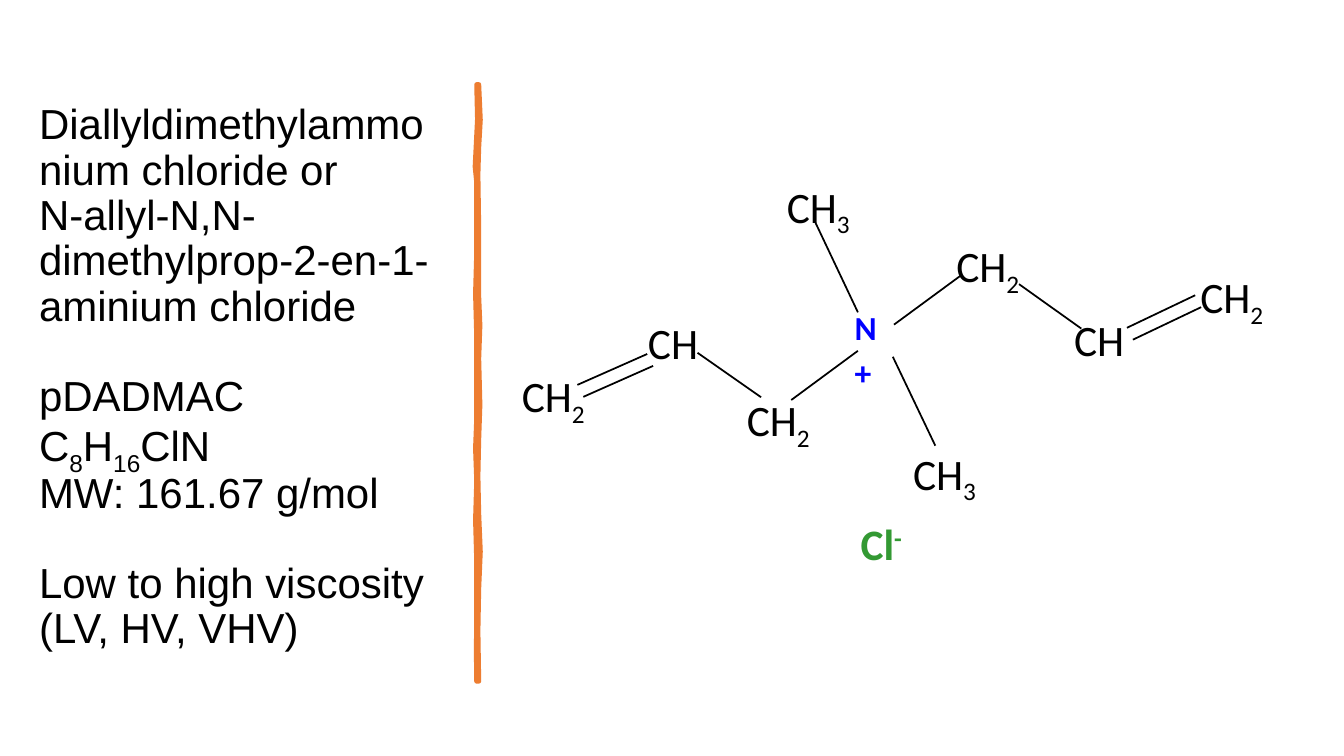
from dataclasses import dataclass

import pptx
import pptx.dml.color
import pptx.enum.shapes
import pptx.enum.text
import pptx.oxml
import pptx.oxml.ns
import pptx.util
from pptx.util import Cm, Pt

BLACK, BLUE, GREEN, ORANGE = "000000", "0000FF", "339933", "ED7D31"
SUB, SUPER = -25, 30
SHIFT = (0.15, 0.3)  # second stroke of a double bond, cm


@dataclass
class Atom:
    left: float
    top: float
    lines: list
    width: float = 2.2
    height: float = 1.45
    size: int = 31
    color: str = BLACK
    bold: bool = False


@dataclass
class Bond:
    start: tuple
    end: tuple
    double: bool = False


CH = [("CH", 0)]
CH2 = CH + [("2", SUB)]
CH3 = CH + [("3", SUB)]

ATOMS = [
    Atom(19.58, 4.42, [CH3]),
    Atom(21.29, 7.72, [[("N", 0)], [("+", 0)]], 1.32, 2.54, 24, BLUE, True),
    Atom(22.76, 11.15, [CH3]),
    Atom(18.57, 9.8, [CH2]),
    Atom(16.08, 7.98, [CH], 1.78),
    Atom(12.9, 9.19, [CH2]),
    Atom(23.85, 5.92, [CH2]),
    Atom(26.82, 7.92, [CH], 1.78),
    Atom(30, 6.71, [CH2]),
    Atom(21.44, 13.06, [[("Cl", 0), ("-", SUPER)]], 1.6, color=GREEN, bold=True),
]

BONDS = [
    Bond((23.57, 11.23), (22.5, 8.99)),
    Bond((21.62, 8.84), (19.94, 10.08)),
    Bond((19.18, 10.01), (17.58, 8.89)),
    Bond((16.31, 8.92), (14.55, 9.7), True),
    Bond((21.62, 7.87), (20.55, 5.61)),
    Bond((24.23, 6.93), (22.53, 8.18)),
    Bond((27.25, 8.28), (25.68, 7.16)),
    Bond((30.12, 7.44), (28.4, 8.26), True),
]

FACTS = [
    [("Diallyldimethylammonium chloride or\n"
      "N-allyl-N,N-dimethylprop-2-en-1-aminium chloride", 0)],
    [("pDADMAC\nC", 0), ("8", SUB), ("H", 0), ("16", SUB),
     ("ClN\nMW: 161.67 g/mol", 0)],
    [("Low to high viscosity\n(LV, HV, VHV)", 0)],
]

# Hand-drawn rule: down the right edge, up the left edge
EDGE = [
    (12.07, 2.13), (12.11, 3.02), (12.07, 3.71), (12.05, 4.4), (12.07, 5.74),
    (12.07, 7.47), (12.1, 8.2), (12.07, 9.04), (12.1, 10.2), (12.07, 11.07),
    (12.05, 12), (12.07, 12.95), (12.11, 13.9), (12.07, 14.83), (12.05, 15.9),
    (12.07, 17.17), (12.01, 17.17), (12, 16.4), (12.01, 15.57), (12.01, 14.15),
    (11.98, 13.1), (12.01, 12.12), (11.98, 11.3), (12.01, 10.54), (12.01, 8.51),
    (11.98, 7.4), (12.01, 6.35), (12.01, 4.6), (11.97, 4.2), (12.03, 3),
    (12.01, 2.13),
]


def paint(target, color: str) -> None:
    """Set a colour format from a hex string."""
    target.rgb = pptx.dml.color.RGBColor.from_string(color)


def append(parent, tag: str) -> None:
    """Add an empty drawing element at the end of parent."""
    parent.append(pptx.oxml.parse_xml(f"<a:{tag} {pptx.oxml.ns.nsdecls('a')}/>"))


def write(frame, lines: list, font: str, size: int, color: str,
          bold: bool = False, before: int = 0, after: int = 0) -> None:
    """Fill a text frame; each line is a list of (text, baseline) pieces."""
    for i, line in enumerate(lines):
        para = frame.add_paragraph() if i else frame.paragraphs[0]
        para.alignment = pptx.enum.text.PP_ALIGN.LEFT
        para.line_spacing = 0.9
        para.space_before = Pt(before if i else 0)
        para.space_after = Pt(after)
        para.font.name = font
        para.font.size = Pt(size)
        para.font.bold = bold
        paint(para.font.color, color)
        for text, base in line:
            for j, part in enumerate(text.split("\n")):
                if j:
                    para.add_line_break()
                run = para.add_run()
                run.text = part
                if base:
                    run._r.get_or_add_rPr().set("baseline", str(base * 1000))


def draw_title(slide) -> None:
    title = slide.shapes.title
    title.left, title.top = Cm(0.73), Cm(1.77)
    title.width, title.height = Cm(10.54), Cm(15.52)
    frame = title.text_frame
    frame.word_wrap = True
    frame.auto_size = pptx.enum.text.MSO_AUTO_SIZE.NONE
    frame.vertical_anchor = pptx.enum.text.MSO_ANCHOR.MIDDLE
    write(frame, FACTS, "Arial", 30, BLACK, before=32)


def draw_rule(slide) -> None:
    points = [(Cm(x), Cm(y)) for x, y in EDGE]
    maker = slide.shapes.build_freeform(*points[0])
    maker.add_line_segments(points[1:], close=True)
    rule = maker.convert_to_shape()
    rule.shadow.inherit = False
    rule.fill.solid()
    paint(rule.fill.fore_color, ORANGE)
    paint(rule.line.color, ORANGE)
    rule.line.width = Pt(3.25)
    append(rule._element.spPr.find(pptx.oxml.ns.qn("a:ln")), "round")


def draw_bond(group, bond: Bond) -> None:
    for dx, dy in [(0, 0), SHIFT] if bond.double else [(0, 0)]:
        line = group.shapes.add_connector(
            pptx.enum.shapes.MSO_CONNECTOR.STRAIGHT,
            Cm(bond.start[0] + dx), Cm(bond.start[1] + dy),
            Cm(bond.end[0] + dx), Cm(bond.end[1] + dy))
        paint(line.line.color, BLACK)
        line.line.width = Pt(1.25)
        append(line._element.spPr, "effectLst")


def draw_atom(group, atom: Atom) -> None:
    box = group.shapes.add_textbox(
        Cm(atom.left), Cm(atom.top), Cm(atom.width), Cm(atom.height))
    box.text_frame.word_wrap = False
    write(box.text_frame, atom.lines, "Calibri", atom.size, atom.color,
          atom.bold, after=6)


def main() -> None:
    deck = pptx.Presentation()
    deck.slide_width, deck.slide_height = Cm(33.87), Cm(19.05)
    slide = deck.slides.add_slide(deck.slide_layouts[5])
    draw_title(slide)
    draw_rule(slide)
    group = slide.shapes.add_group_shape()
    for bond in BONDS:
        draw_bond(group, bond)
    for atom in ATOMS:
        draw_atom(group, atom)
    deck.save("out.pptx")


if __name__ == "__main__":
    main()
